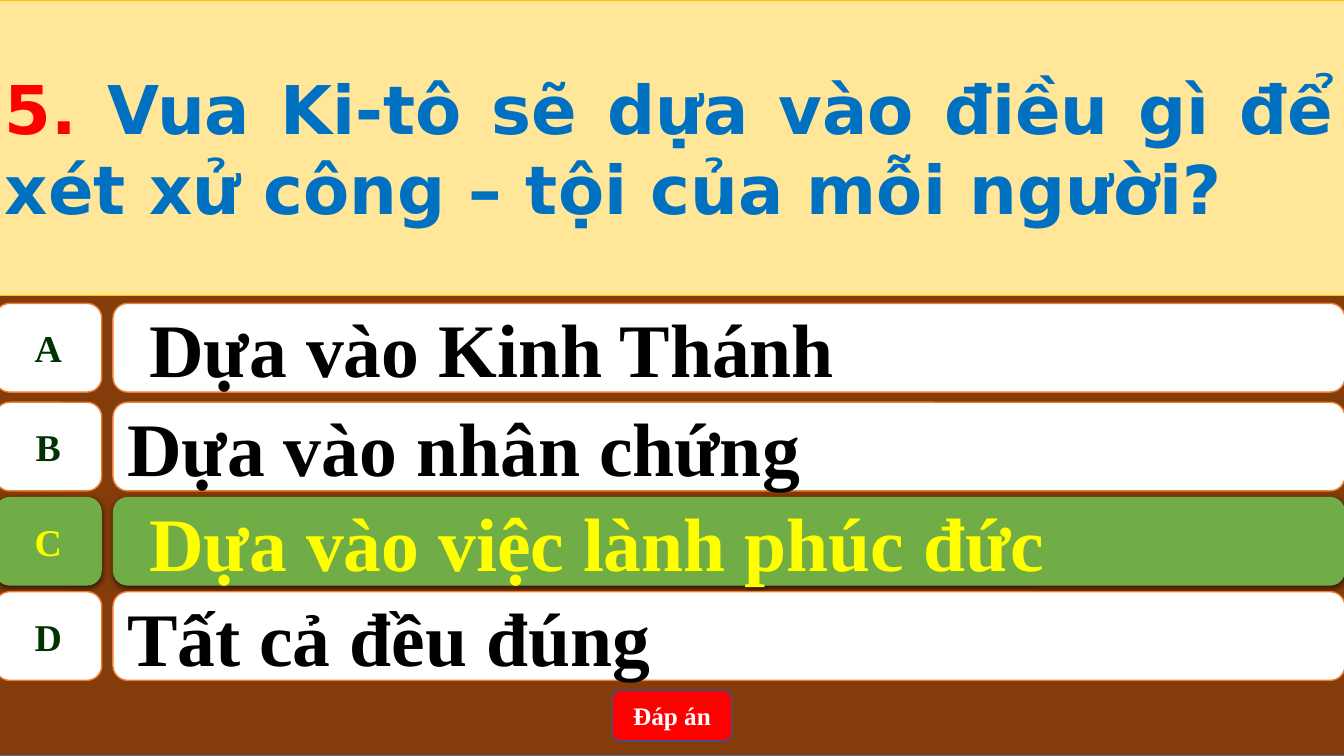
from lxml import etree
from pptx import Presentation
from pptx.dml.color import RGBColor
from pptx.enum.shapes import MSO_SHAPE
from pptx.enum.text import MSO_ANCHOR, PP_ALIGN
from pptx.oxml.ns import qn
from pptx.util import Inches, Pt

RECT = MSO_SHAPE.RECTANGLE
ROUNDED = MSO_SHAPE.ROUNDED_RECTANGLE
BADGE = MSO_SHAPE.FLOWCHART_ALTERNATE_PROCESS
MIDDLE = MSO_ANCHOR.MIDDLE
LEFT, CENTER, JUSTIFY = PP_ALIGN.LEFT, PP_ALIGN.CENTER, PP_ALIGN.JUSTIFY

COLORS = {
    "brown": "843C0B", "frame": "43739E", "cream": "FFE699", "gold": "FFC000",
    "white": "FFFFFF", "orange": "ED7D31", "green": "70AD47", "yellow": "FFFF00",
    "red": "FF0000", "blue": "0070C0", "navy": "325491", "dark": "003300",
    "black": "000000",
}
SERIF, SANS = "Times New Roman", "DejaVu Sans"

ANSWERS = [
    ("A", "Dựa vào Kinh Thánh", 3.01, True, False),
    ("B", "Dựa vào nhân chứng", 3.99, False, False),
    ("C", "Dựa vào việc lành phúc đức", 4.93, True, True),
    ("D", "Tất cả đều đúng", 5.87, False, False),
]


def rgb(name):
    return RGBColor.from_string(COLORS[name])


def add_box(s, kind, box, fill, line=None, width=1):
    sp = s.shapes.add_shape(kind, *[Inches(v) for v in box])
    sp.shadow.inherit = False
    sp.fill.solid()
    sp.fill.fore_color.rgb = rgb(fill)
    if line:
        sp.line.color.rgb = rgb(line)
        sp.line.width = Pt(width)
    else:
        sp.line.fill.background()
    return sp


def add_text(sp, runs, size, font, align, wrap=True):
    tf = sp.text_frame
    tf.word_wrap = wrap
    tf.vertical_anchor = MIDDLE
    p = tf.paragraphs[0]
    p.alignment = align
    for text, color in runs:
        r = p.add_run()
        r.text = text
        for key, value in {"size": Pt(size), "name": font, "bold": True}.items():
            setattr(r.font, key, value)
        r.font.color.rgb = rgb(color)
    return p


def add_shadow(sp):
    effects = sp._element.spPr.find(qn("a:effectLst"))
    shadow = etree.SubElement(effects, qn("a:outerShdw"), blurRad=str(Pt(4.5)),
                              dist=str(Pt(1.5)), dir="5400000", rotWithShape="0")
    color = etree.SubElement(shadow, qn("a:srgbClr"), val=COLORS["black"])
    etree.SubElement(color, qn("a:alpha"), val="63000")


def add_question(s, box):
    sp = add_box(s, RECT, box, "cream", "gold", 0.5)
    runs = [("5. ", "red"),
            ("Vua Ki-tô sẽ dựa vào điều gì để xét xử công – tội của mỗi người?", "blue")]
    add_text(sp, runs, 48, SANS, JUSTIFY)


def add_answer(s, box, letter, text, indented, correct):
    x, y, w, h = box
    badge_w, offset = 1.06, 1.17
    fill, line = ("green", None) if correct else ("white", "orange")
    bar = add_box(s, ROUNDED, (x + offset, y, w - offset, h), fill, line)
    badge = add_box(s, BADGE, (x, y, badge_w, h), fill, line)
    p = add_text(bar, [(text, "yellow" if correct else "black")], 54, SERIF, LEFT)
    add_text(badge, [(letter, "yellow" if correct else "dark")], 27, SERIF, CENTER, False)
    if indented:
        pPr = p._p.get_or_add_pPr()
        pPr.set("marL", str(Inches(0.5)))
        pPr.set("indent", str(Inches(-0.28)))
    if correct:
        add_shadow(bar)
        add_shadow(badge)


def add_button(s, box):
    sp = add_box(s, ROUNDED, box, "red", "navy")
    add_text(sp, [("Đáp án", "white")], 18, SERIF, CENTER)


def add_quiz_slide(prs):
    s = prs.slides.add_slide(prs.slide_layouts[6])
    x, w = -0.05, 13.39
    add_box(s, RECT, (x, 0, w, 7.5), "brown", "frame")
    add_question(s, (x, 0, w, 2.93))
    for letter, text, y, indented, correct in ANSWERS:
        add_answer(s, (x, y, w, 0.88), letter, text, indented, correct)
    add_button(s, (6.07, 6.85, 1.19, 0.5))


def main():
    prs = Presentation()
    prs.slide_width, prs.slide_height = Inches(13.33), Inches(7.5)
    add_quiz_slide(prs)
    prs.save("out.pptx")


if __name__ == "__main__":
    main()
